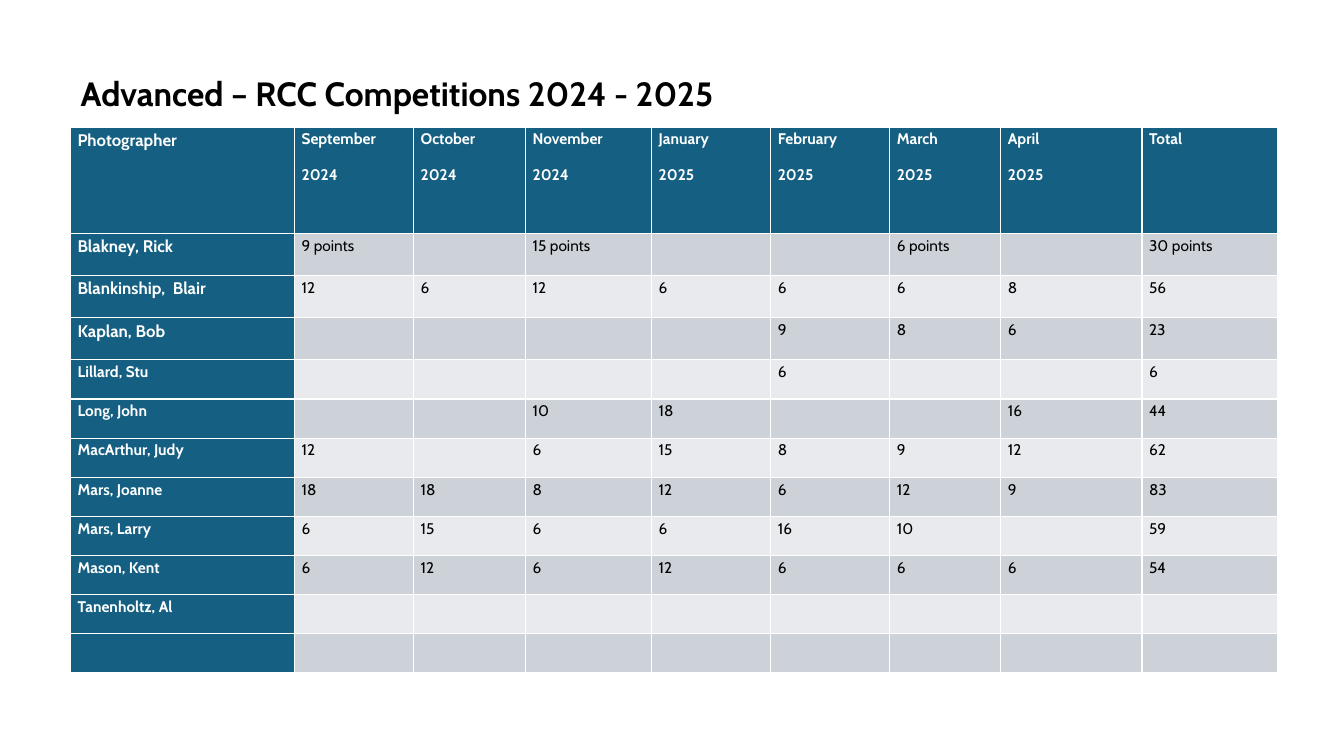
import pptx
import pptx.dml.color
import pptx.enum.text
import pptx.util
from dataclasses import dataclass

Inches = pptx.util.Inches
Pt = pptx.util.Pt


def color(code):
    return pptx.dml.color.RGBColor.from_string(code)


@dataclass(frozen=True)
class Theme:
    font: str = "Cabin"
    blue: str = "156082"
    bands: tuple = ("CCD2D8", "E8EAED")
    black: str = "000000"
    white: str = "FFFFFF"
    title_size: int = 24
    large_size: int = 12
    text_size: int = 11


THEME = Theme()
TITLE = "Advanced – RCC Competitions 2024 - 2025"
MONTHS = [("September", "2024"), ("October", "2024"), ("November", "2024"),
          ("January", "2025"), ("February", "2025"), ("March", "2025"),
          ("April", "2025")]
HEADINGS = [("Photographer",), *MONTHS, ("Total",)]
SCORES = [
    ["Blakney, Rick", "9 points", "", "15 points", "", "", "6 points", "", "30 points"],
    ["Blankinship,  Blair", 12, 6, 12, 6, 6, 6, 8, 56],
    ["Kaplan, Bob", "", "", "", "", 9, 8, 6, 23],
    ["Lillard, Stu", "", "", "", "", 6, "", "", 6],
    ["Long, John", "", "", 10, 18, "", "", 16, 44],
    ["MacArthur, Judy", 12, "", 6, 15, 8, 9, 12, 62],
    ["Mars, Joanne", 18, 18, 8, 12, 6, 12, 9, 83],
    ["Mars, Larry", 6, 15, 6, 6, 16, 10, "", 59],
    ["Mason, Kent", 6, 12, 6, 12, 6, 6, 6, 54],
    ["Tanenholtz, Al"] + [""] * 8,
    [""] * 9,
]
COLUMN_WIDTHS = [2.22, 1.18, 1.11, 1.25, 1.18, 1.18, 1.1, 1.4, 1.34]
LARGE_ROWS = 3  # the first photographers have larger names and taller rows
ROW_HEIGHTS = [1.06] + [0.42] * LARGE_ROWS + [0.39] * (len(SCORES) - LARGE_ROWS)


def style_font(para, size, ink, bold):
    para.font.name = THEME.font
    para.font.size = Pt(size)
    para.font.bold = bold
    para.font.color.rgb = color(ink)


def add_title(page, left, top, width, height):
    title = page.shapes.title
    title.left, title.top = Inches(left), Inches(top)
    title.width, title.height = Inches(width), Inches(height)
    frame = title.text_frame
    frame.text = TITLE
    frame.word_wrap = True
    frame.vertical_anchor = pptx.enum.text.MSO_ANCHOR.TOP
    para = frame.paragraphs[0]
    para.alignment = pptx.enum.text.PP_ALIGN.LEFT
    style_font(para, THEME.title_size, THEME.black, True)


def fill_cell(cell, lines, fill, ink, size, bold):
    cell.fill.solid()
    cell.fill.fore_color.rgb = color(fill)
    cell.margin_left = cell.margin_right = Inches(0.07)
    cell.margin_top = cell.margin_bottom = 0
    cell.text = "\n".join(lines)
    for para in cell.text_frame.paragraphs:
        para.line_spacing = 1.15
        para.space_after = Pt(10)
        style_font(para, size, ink, bold)


def add_scores(page, left, top, width, height):
    table = page.shapes.add_table(
        len(ROW_HEIGHTS), len(COLUMN_WIDTHS),
        Inches(left), Inches(top), Inches(width), Inches(height)).table
    table.first_col = True
    for column, share in zip(table.columns, COLUMN_WIDTHS):
        column.width = Inches(share * width / sum(COLUMN_WIDTHS))
    for row, share in zip(table.rows, ROW_HEIGHTS):
        row.height = Inches(share * height / sum(ROW_HEIGHTS))

    # Month headings
    for index, lines in enumerate(HEADINGS):
        size = THEME.text_size if index else THEME.large_size
        fill_cell(table.cell(0, index), lines, THEME.blue, THEME.white, size, True)

    # Photographers and their points
    for number, (name, *points) in enumerate(SCORES):
        size = THEME.large_size if number < LARGE_ROWS else THEME.text_size
        fill_cell(table.cell(number + 1, 0), [name], THEME.blue, THEME.white, size, True)
        band = THEME.bands[number % 2]
        for index, value in enumerate(points, 1):
            fill_cell(table.cell(number + 1, index), [str(value)], band,
                      THEME.black, THEME.text_size, False)


def main():
    deck = pptx.Presentation()
    deck.slide_width, deck.slide_height = Inches(13.33), Inches(7.5)
    page = deck.slides.add_slide(deck.slide_layouts.get_by_name("Title Only"))
    add_scores(page, 0.7, 1.26, 11.97, 5.42)
    add_title(page, 0.7, 0.67, 6.78, 0.5)
    deck.save("out.pptx")


if __name__ == "__main__":
    main()
